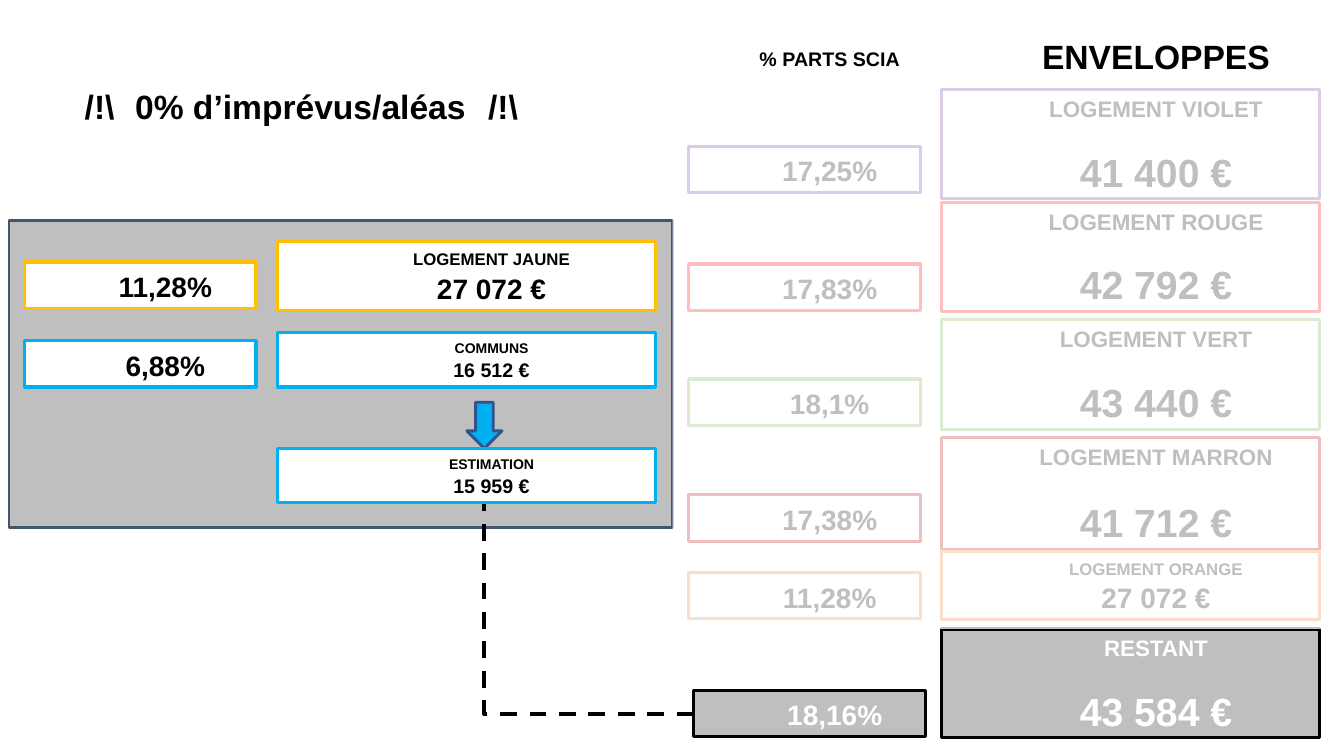
from lxml import etree
from pptx import Presentation
from pptx import util as u
from pptx.dml.color import RGBColor
from pptx.enum import dml, shapes, text
from pptx.oxml.ns import qn

FONT = "Arial"
BLACK, WHITE, GREY = "000000", "FFFFFF", "BFBFBF"
PURPLE, RED, GREEN, BROWN, ORANGE = "7030A0", "FF0000", "70AD47", "C00000", "ED7D31"
YELLOW, BLUE = "FFC000", "00B0F0"
SHARE_WIDTH, SHARE_HEIGHT, BUDGET_WIDTH = 2.3, 0.46, 3.75

SHARES = [
    (1.45, "17,25%", PURPLE),
    (2.62, "17,83%", RED),
    (3.76, "18,1%", GREEN),
    (4.91, "17,38%", BROWN),
    (5.68, "11,28%", ORANGE),
]
BUDGETS = [
    (0.89, 1.08, "LOGEMENT VIOLET", "41 400 €", PURPLE, 16, 28, 16),
    (2.01, 1.08, "LOGEMENT ROUGE", "42 792 €", RED, 16, 28, 16),
    (3.17, 1.09, "LOGEMENT VERT", "43 440 €", GREEN, 16, 28, 16.5),
    (4.34, 1.11, "LOGEMENT MARRON", "41 712 €", BROWN, 16, 28, 18),
    (5.47, 0.68, "LOGEMENT ORANGE", "27 072 €", ORANGE, 12, 20, 0),
]


def color(value):
    return RGBColor.from_string(value)


def add_block(page, kind, box, fill, line=None, width=2.25):
    block = page.shapes.add_shape(kind, *map(u.Inches, box))
    block.shadow.inherit = False
    block.fill.solid()
    block.fill.fore_color.rgb = color(fill)
    if line:
        block.line.color.rgb = color(line)
        block.line.width = u.Pt(width)
    else:
        block.line.fill.background()
    return block


def write_lines(shape, lines, ink=BLACK, align=text.PP_ALIGN.CENTER, indent=0.5, gap=0):
    frame = shape.text_frame
    frame.word_wrap = True
    frame.auto_size = text.MSO_AUTO_SIZE.NONE
    frame.vertical_anchor = text.MSO_ANCHOR.MIDDLE
    frame.margin_left = frame.margin_right = u.Inches(0.1)
    frame.margin_top = frame.margin_bottom = u.Inches(0.05)
    frame.text = "\n".join(words for words, size in lines)
    for index, (para, (words, size)) in enumerate(zip(frame.paragraphs, lines)):
        para.alignment = align
        para.line_spacing = 1.07
        if index and gap:
            para.space_before = u.Pt(gap)
        properties = para._p.get_or_add_pPr()
        properties.set("marL", str(u.Inches(indent)))
        properties.set("indent", "0")
        for span in para.runs:
            span.font.name = FONT
            span.font.size = u.Pt(size)
            span.font.bold = True
            span.font.color.rgb = color(ink)


def add_share(page, left, top, words, line, fill=WHITE, ink=BLACK):
    box = (left, top, SHARE_WIDTH, SHARE_HEIGHT)
    share = add_block(page, shapes.MSO_SHAPE.RECTANGLE, box, fill, line)
    write_lines(share, [(words, 20)], ink)


def add_budget(page, left, top, height, name, amount, line, name_size, amount_size,
               gap=0, fill=WHITE, ink=BLACK):
    box = (left, top, BUDGET_WIDTH, height)
    budget = add_block(page, shapes.MSO_SHAPE.RECTANGLE, box, fill, line)
    write_lines(budget, [(name, name_size), (amount, amount_size)], ink, gap=gap)


def add_heading(page, box, words, size):
    heading = page.shapes.add_textbox(*map(u.Inches, box))
    write_lines(heading, [(words, size)])


def place_title(page, left, top, width, height):
    title = page.shapes.title
    title.left, title.top = u.Inches(left), u.Inches(top)
    title.width, title.height = u.Inches(width), u.Inches(height)
    write_lines(title, [("/!\\\t0% d’imprévus/aléas\t/!\\", 24)],
                align=text.PP_ALIGN.LEFT, indent=0)
    title.text_frame.margin_left = u.Inches(0.6)
    properties = title.text_frame.paragraphs[0]._p.get_or_add_pPr()
    stops = etree.SubElement(properties, qn("a:tabLst"))
    for position in (0.66, 4.31):
        etree.SubElement(stops, qn("a:tab"), pos=str(u.Inches(position)), algn="l")


def draw_yellow_panel(page, left, top, width, height):
    add_block(page, shapes.MSO_SHAPE.RECTANGLE, (left, top, width, height), GREY, "44546A", 2)
    share_left, budget_left = left + 0.15, left + 2.66
    add_share(page, share_left, top + 0.41, "11,28%", YELLOW)
    add_share(page, share_left, top + 1.19, "6,88%", BLUE)
    add_budget(page, budget_left, top + 0.21, 0.68, "LOGEMENT JAUNE", "27 072 €", YELLOW, 12, 20)
    add_budget(page, budget_left, top + 1.11, 0.54, "COMMUNS", "16 512 €", BLUE, 10, 14)
    arrow_box = (left + 4.54, top + 1.8, 0.35, 0.46)
    add_block(page, shapes.MSO_SHAPE.DOWN_ARROW, arrow_box, BLUE, "31538F", 2)
    add_budget(page, budget_left, top + 2.26, 0.54, "ESTIMATION", "15 959 €", BLUE, 10, 14)


def draw_share_column(page, left):
    add_heading(page, (left, 0.41, SHARE_WIDTH, 0.33), "% PARTS SCIA", 14)
    for top, words, line in SHARES:
        add_share(page, left, top, words, line)
    add_share(page, left + 0.05, 6.85, "18,16%", BLACK, GREY, WHITE)


def draw_budget_column(page, left):
    add_heading(page, (left, 0.29, BUDGET_WIDTH, 0.5), "ENVELOPPES", 24)
    for budget in BUDGETS:
        add_budget(page, left, *budget)
    add_budget(page, left, 6.24, 1.08, "RESTANT", "43 584 €", BLACK, 16, 28, 16, GREY, WHITE)


def draw_dashed_link(page, left, top, right, bottom):
    link = page.shapes.add_connector(
        shapes.MSO_CONNECTOR.ELBOW, *map(u.Inches, (left, top, right, bottom)))
    link.line.color.rgb = color(BLACK)
    link.line.width = u.Pt(3)
    link.line.dash_style = dml.MSO_LINE.DASH
    properties = link._element.spPr
    properties.find(qn("a:xfrm")).set("rot", "10800000")
    properties.find(qn("a:prstGeom")).set("prst", "bentConnector2")
    etree.SubElement(properties, qn("a:effectLst"))


def draw_veil(page, left, top, width, height):
    veil = add_block(page, shapes.MSO_SHAPE.RECTANGLE, (left, top, width, height), WHITE)
    tint = veil._element.spPr.find(qn("a:solidFill")).find(qn("a:srgbClr"))
    etree.SubElement(tint, qn("a:alpha"), val="75000")


def build_budget_page(deck):
    page = deck.slides.add_slide(deck.slide_layouts[5])
    place_title(page, 0.24, 0.79, 5.64, 0.5)
    draw_yellow_panel(page, 0.09, 2.19, 6.58, 3.04)
    draw_share_column(page, 6.83)
    draw_dashed_link(page, 4.8, 5, 6.88, 7.08)
    draw_budget_column(page, 9.34)
    draw_veil(page, 6.67, 0.82, 6.58, 5.42)


def main():
    deck = Presentation()
    deck.slide_width, deck.slide_height = u.Inches(13.33), u.Inches(7.5)
    build_budget_page(deck)
    deck.save("out.pptx")


if __name__ == "__main__":
    main()
